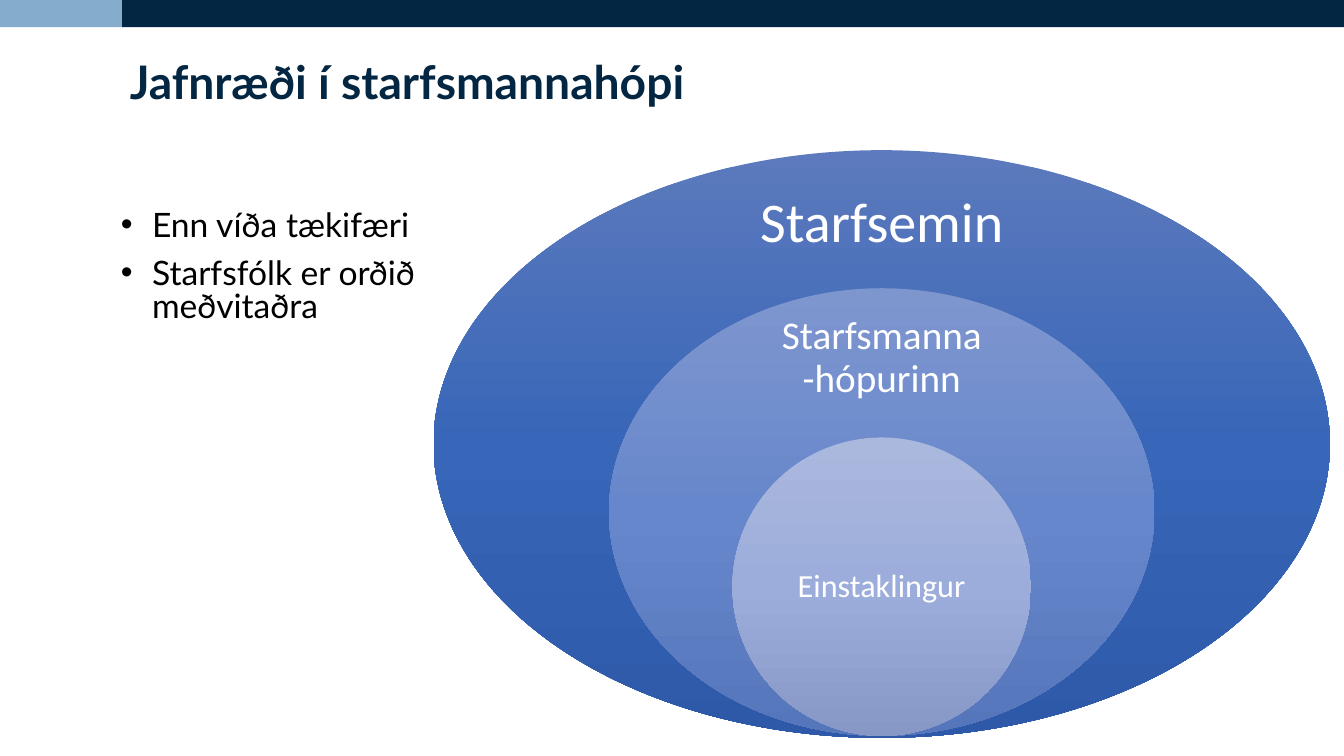
from copy import deepcopy
from dataclasses import dataclass

from lxml.etree import SubElement
from pptx import Presentation
from pptx.dml.color import RGBColor
from pptx.enum.shapes import MSO_SHAPE
from pptx.enum.text import MSO_ANCHOR, PP_ALIGN
from pptx.oxml.ns import qn
from pptx.util import Inches, Pt


@dataclass(frozen=True)
class Theme:
    navy: str = "032742"
    light_blue: str = "85ABCD"
    white: str = "FFFFFF"
    black: str = "000000"
    outer: tuple = ("5C7ABD", "3866B8", "2D59A8")
    middle: tuple = ("7E96CE", "6787CC", "5676BB")
    inner: tuple = ("ABB8DD", "9CADDB", "8798C6")
    text_font: str = "Lato"
    diagram_font: str = "Calibri"
    title_size: int = 33
    list_size: int = 24
    outer_size: int = 40
    middle_size: int = 28
    inner_size: int = 23


@dataclass(frozen=True)
class Box:
    left: float
    top: float
    width: float
    height: float

    def lengths(self):
        return [Inches(value) for value in (self.left, self.top, self.width, self.height)]

    def centred(self, top, width, height):
        return Box(self.left + (self.width - width) / 2, self.top + top, width, height)


@dataclass(frozen=True)
class Ring:
    label: str
    colors: tuple
    size: int
    ellipse: tuple
    label_area: tuple
    inset: float


THEME = Theme()
RINGS = [
    Ring("Starfsemin", THEME.outer, THEME.outer_size,
         (0, 8.89, 5.83), (0.3, 3.11, 0.88), 0.31),
    Ring("Starfsmanna-hópurinn", THEME.middle, THEME.middle_size,
         (1.37, 5.41, 4.44), (1.65, 2.52, 0.83), 0.22),
    Ring("Einstaklingur", THEME.inner, THEME.inner_size,
         (2.85, 2.96, 2.96), (3.59, 2.1, 1.48), 0.18),
]


def apply_format(target, values):
    for name, value in values.items():
        setattr(target, name, value)


def add_plain_shape(slide, box, preset):
    shape = slide.shapes.add_shape(preset, *box.lengths())
    shape.shadow.inherit = False
    shape.line.fill.background()
    return shape


def add_text(slide, box, lines, font_values, paragraph_values, frame_values=None):
    frame = slide.shapes.add_textbox(*box.lengths()).text_frame
    apply_format(frame, {"word_wrap": True, **(frame_values or {})})
    for index, line in enumerate(lines):
        paragraph = frame.add_paragraph() if index else frame.paragraphs[0]
        apply_format(paragraph, paragraph_values)
        run = paragraph.add_run()
        run.text = line
        values = dict(font_values)
        run.font.color.rgb = RGBColor.from_string(values.pop("color"))
        apply_format(run.font, values)
    return frame


def fill_gradient(shape, colors):
    fill = shape.fill
    fill.gradient()
    fill.gradient_angle = 270
    stop_list = shape.element.spPr.find(".//" + qn("a:gsLst"))
    stop_list.append(deepcopy(stop_list[0]))
    for index, (stop, color) in enumerate(zip(fill.gradient_stops, colors)):
        stop.position = index / (len(colors) - 1)
        stop.color.rgb = RGBColor.from_string(color)


def add_header_band(slide, box, accent_width):
    accent = Box(box.left, box.top, accent_width, box.height)
    band = Box(box.left + accent_width, box.top, box.width - accent_width, box.height)
    for part, color in ((band, THEME.navy), (accent, THEME.light_blue)):
        shape = add_plain_shape(slide, part, MSO_SHAPE.RECTANGLE)
        shape.fill.solid()
        shape.fill.fore_color.rgb = RGBColor.from_string(color)


def add_title(slide, box, title):
    font_values = {"name": THEME.text_font, "size": Pt(THEME.title_size),
                   "bold": True, "color": THEME.navy}
    add_text(slide, box, [title], font_values,
             {"line_spacing": 0.9, "space_before": Pt(10)})


def add_bullet_list(slide, box, items):
    font_values = {"name": THEME.text_font, "size": Pt(THEME.list_size),
                   "color": THEME.black}
    frame = add_text(slide, box, items, font_values,
                     {"line_spacing": Pt(24), "space_before": Pt(10)})
    indent = Inches(0.31)
    for paragraph in frame.paragraphs:
        properties = paragraph._p.get_or_add_pPr()
        properties.set("marL", str(indent))
        properties.set("indent", str(-indent))
        SubElement(properties, qn("a:buFont"), typeface="Arial")
        SubElement(properties, qn("a:buChar"), char="•")


def add_nested_rings(slide, box, rings):
    for ring in rings:
        ellipse = add_plain_shape(slide, box.centred(*ring.ellipse), MSO_SHAPE.OVAL)
        fill_gradient(ellipse, ring.colors)
        font_values = {"name": THEME.diagram_font, "size": Pt(ring.size),
                       "color": THEME.white}
        frame_values = {f"margin_{side}": Inches(ring.inset)
                        for side in ("left", "top", "right", "bottom")}
        frame_values["vertical_anchor"] = MSO_ANCHOR.MIDDLE
        add_text(slide, box.centred(*ring.label_area), [ring.label], font_values,
                 {"alignment": PP_ALIGN.CENTER, "line_spacing": 0.9}, frame_values)


def main():
    presentation = Presentation()
    apply_format(presentation, {"slide_width": Inches(13.33), "slide_height": Inches(7.5)})
    slide = presentation.slides.add_slide(presentation.slide_layouts[6])
    add_header_band(slide, Box(0, 0, 13.33, 0.27), 1.21)
    add_title(slide, Box(1.19, 0.54, 10.83, 0.86), "Jafnræði í starfsmannahópi")
    add_bullet_list(slide, Box(1.1, 2.04, 3.24, 5.02),
                    ["Enn víða tækifæri", "Starfsfólk er orðið meðvitaðra"])
    add_nested_rings(slide, Box(4.3, 1.49, 8.89, 5.83), RINGS)
    presentation.save("out.pptx")


if __name__ == "__main__":
    main()
